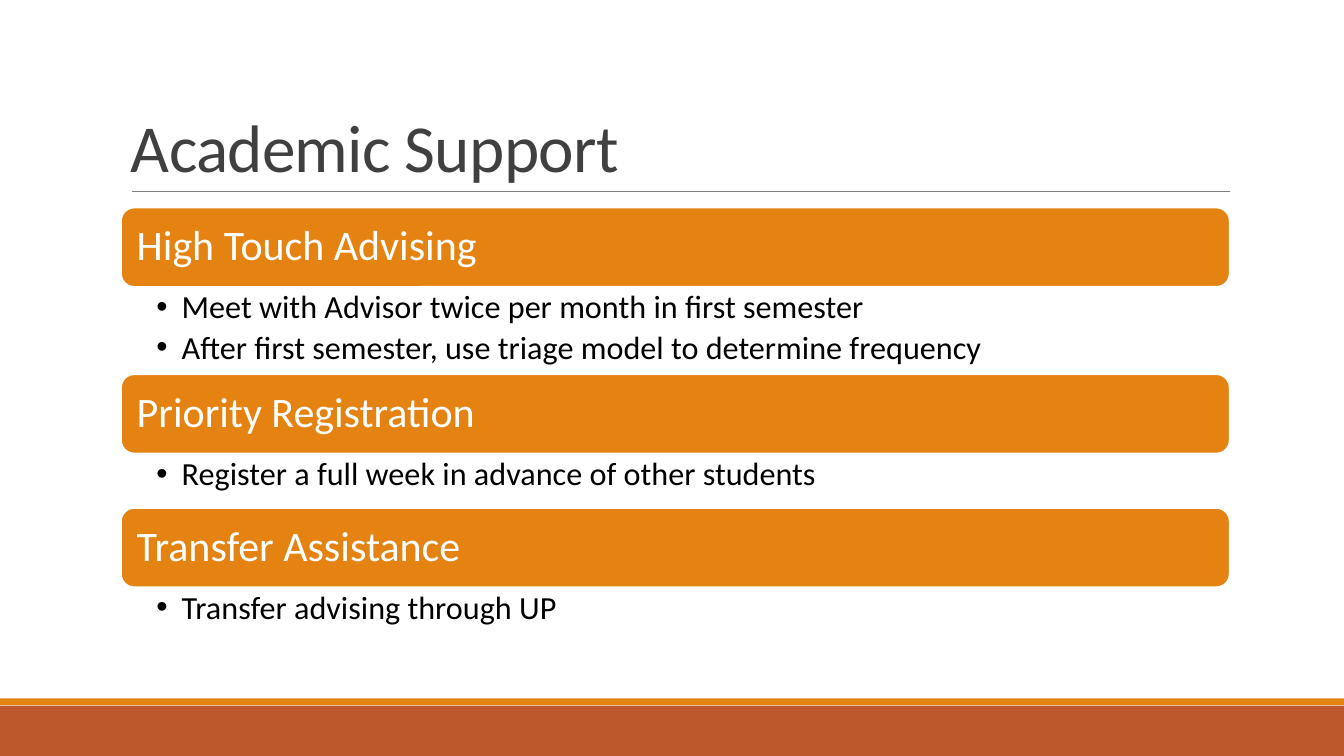
from lxml import etree
from pptx import Presentation
from pptx.dml.color import RGBColor
from pptx.enum.shapes import MSO_CONNECTOR, MSO_SHAPE
from pptx.enum.text import MSO_ANCHOR, PP_ALIGN
from pptx.oxml.ns import qn
from pptx.util import Cm, Pt

RECTANGLE = MSO_SHAPE.RECTANGLE
ROUNDED = MSO_SHAPE.ROUNDED_RECTANGLE
STRAIGHT = MSO_CONNECTOR.STRAIGHT
TOP, MIDDLE, BOTTOM = MSO_ANCHOR.TOP, MSO_ANCHOR.MIDDLE, MSO_ANCHOR.BOTTOM
LEFT = PP_ALIGN.LEFT

SLIDE_WIDTH, SLIDE_HEIGHT = 33.87, 19.05
CONTENT_LEFT, CONTENT_WIDTH = 3.05, 27.94
SECTIONS_TOP, HEADING_HEIGHT = 5.23, 2.0
BULLET_INDENT = Cm(0.64)
ORANGE, RUST, WHITE = "E48312", "BD582C", "FFFFFF"

# Heading, height of the bullet list in cm, bullets
SECTIONS = [
    ("High Touch Advising", 2.2, [
        "Meet with Advisor twice per month in first semester",
        "After first semester, use triage model to determine frequency",
    ]),
    ("Priority Registration", 1.37, [
        "Register a full week in advance of other students",
    ]),
    ("Transfer Assistance", 1.37, ["Transfer advising through UP"]),
]


def color(hex_string):
    return RGBColor.from_string(hex_string)


class SlideBuilder:
    font = "Calibri"

    def __init__(self, slide):
        self.slide = slide

    def frame(self, shape, anchor, margins):
        """Set wrapping, anchor and left, top, right, bottom margins in cm."""
        text_frame = shape.text_frame
        text_frame.word_wrap = True
        text_frame.vertical_anchor = anchor
        (text_frame.margin_left, text_frame.margin_top,
         text_frame.margin_right, text_frame.margin_bottom) = map(Cm, margins)
        return text_frame

    def add_text(self, paragraph, text, size, text_color, line_spacing=0.9):
        paragraph.alignment = LEFT
        paragraph.line_spacing = line_spacing
        run = paragraph.add_run()
        run.text = text
        run.font.name = self.font
        run.font.size = Pt(size)
        run.font.color.rgb = color(text_color)
        return run

    def block(self, kind, left, top, width, height, fill, outline=None):
        shape = self.slide.shapes.add_shape(
            kind, Cm(left), Cm(top), Cm(width), Cm(height))
        shape.shadow.inherit = False
        shape.fill.solid()
        shape.fill.fore_color.rgb = color(fill)
        if outline:
            shape.line.color.rgb = color(outline)
            shape.line.width = Pt(1.25)
        else:
            shape.line.fill.background()
        return shape

    def rule(self, left, right, top):
        line = self.slide.shapes.add_connector(
            STRAIGHT, Cm(left), Cm(top), Cm(right), Cm(top))
        line.line.color.rgb = color("808080")
        line.line.width = Pt(0.5)
        etree.SubElement(line._element.spPr, qn("a:effectLst"))

    def text_box(self, top, height, anchor, margins):
        box = self.slide.shapes.add_textbox(
            Cm(CONTENT_LEFT), Cm(top), Cm(CONTENT_WIDTH), Cm(height))
        return self.frame(box, anchor, margins)

    def title(self, text, top, height):
        text_frame = self.text_box(
            top, height, BOTTOM, (0.25, 0.13, 0.25, 0.13))
        run = self.add_text(text_frame.paragraphs[0], text, 48, "404040", 0.85)
        run._r.get_or_add_rPr().set("spc", "-50")

    def heading(self, text, top):
        bar = self.block(ROUNDED, CONTENT_LEFT, top, CONTENT_WIDTH,
                         HEADING_HEIGHT, ORANGE, WHITE)
        text_frame = self.frame(bar, MIDDLE, (0.3, 0.3, 0.3, 0.3))
        self.add_text(text_frame.paragraphs[0], text, 30, WHITE)

    def bullets(self, items, top, height):
        text_frame = self.text_box(top, height, TOP, (0.89, 0.1, 0.58, 0.1))
        for index, item in enumerate(items):
            paragraph = (text_frame.add_paragraph() if index
                         else text_frame.paragraphs[0])
            self.add_text(paragraph, item, 23, "000000")
            paragraph.space_after = Pt(4)
            properties = paragraph._p.get_or_add_pPr()
            properties.set("marL", str(int(BULLET_INDENT)))
            properties.set("indent", str(-int(BULLET_INDENT)))
            etree.SubElement(properties, qn("a:buFont"), typeface="Arial")
            etree.SubElement(properties, qn("a:buChar"), char="•")


def main():
    presentation = Presentation()
    presentation.slide_width = Cm(SLIDE_WIDTH)
    presentation.slide_height = Cm(SLIDE_HEIGHT)
    builder = SlideBuilder(
        presentation.slides.add_slide(presentation.slide_layouts[6]))

    builder.block(RECTANGLE, 0, 17.78, SLIDE_WIDTH, 1.27, RUST)
    builder.block(RECTANGLE, 0, 17.6, SLIDE_WIDTH, 0.17, ORANGE)
    builder.rule(3.32, 31.0, 4.82)
    builder.title("Academic Support", 0.79, 4.03)

    top = SECTIONS_TOP
    for heading, list_height, items in SECTIONS:
        builder.heading(heading, top)
        builder.bullets(items, top + HEADING_HEIGHT, list_height)
        top += HEADING_HEIGHT + list_height

    presentation.save("out.pptx")


if __name__ == "__main__":
    main()
